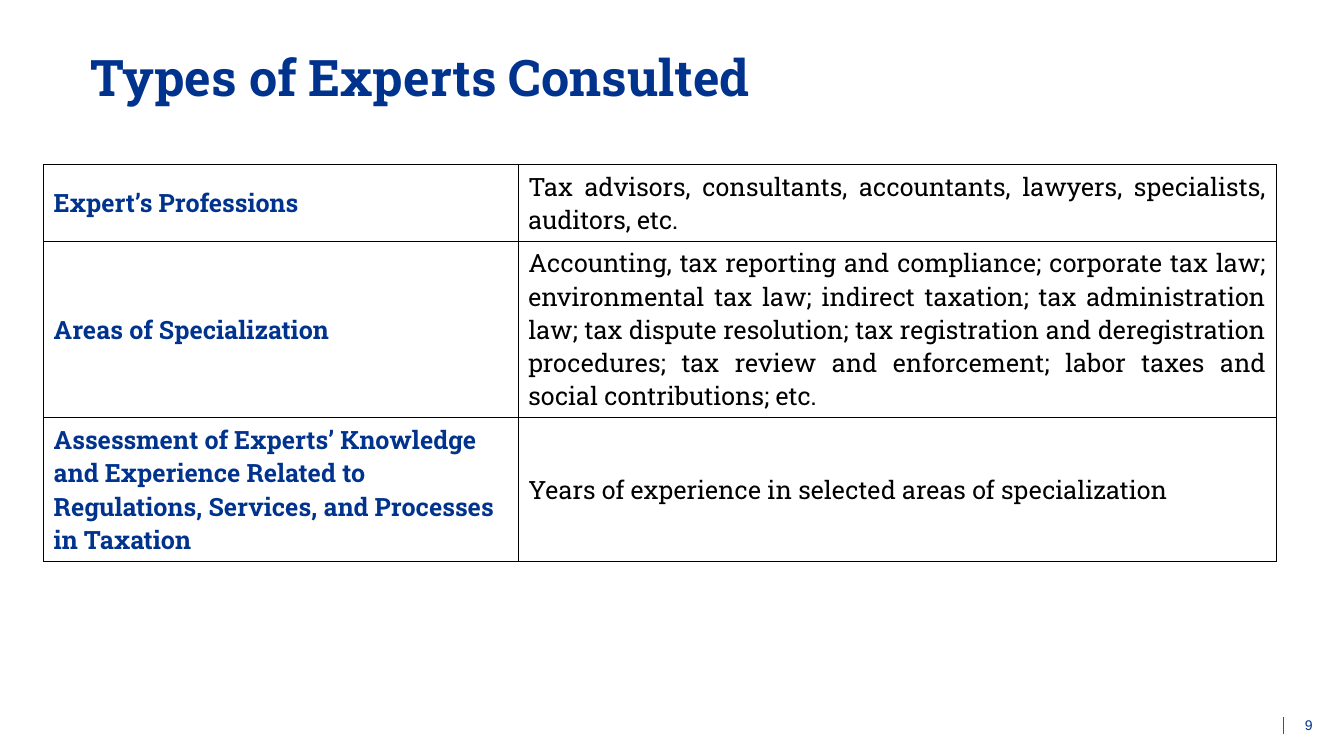
from dataclasses import dataclass

from lxml import etree
from pptx import Presentation
from pptx.dml.color import RGBColor
from pptx.enum.shapes import MSO_CONNECTOR
from pptx.enum.text import MSO_ANCHOR, PP_ALIGN
from pptx.oxml.ns import qn
from pptx.util import Cm, Pt

STRAIGHT = MSO_CONNECTOR.STRAIGHT
MIDDLE, BOTTOM = MSO_ANCHOR.MIDDLE, MSO_ANCHOR.BOTTOM
LEFT, RIGHT, JUSTIFY = PP_ALIGN.LEFT, PP_ALIGN.RIGHT, PP_ALIGN.JUSTIFY


@dataclass(frozen=True)
class Theme:
    navy: str = "00338D"
    blue: str = "1E49E2"
    black: str = "000000"
    heading_font: str = "Roboto Slab"
    number_font: str = "Arial"
    title_size: int = 36
    table_size: int = 18
    number_size: int = 10
    border_width: int = 1
    divider_width: float = 0.5


theme = Theme()


def write(frame, text, font, size, color, bold=False, align=LEFT):
    """Put one styled run in the frame's first paragraph and return the paragraph."""
    frame.word_wrap = True
    para = frame.paragraphs[0]
    para.alignment = align
    span = para.add_run()
    span.text = text
    span.font.name = font
    span.font.size = Pt(size)
    span.font.bold = bold
    span.font.color.rgb = RGBColor.from_string(color)
    return para


def add_borders(cell):
    properties = cell._tc.get_or_add_tcPr()
    for position, side in enumerate(("a:lnL", "a:lnR", "a:lnT", "a:lnB")):
        line = etree.Element(qn(side), w=str(Pt(theme.border_width)))
        fill = etree.SubElement(line, qn("a:solidFill"))
        etree.SubElement(fill, qn("a:srgbClr"), val=theme.black)
        properties.insert(position, line)


deck = Presentation()
deck.slide_width, deck.slide_height = Cm(33.87), Cm(19.05)
page = deck.slides.add_slide(deck.slide_layouts[6])

# Title
title = page.shapes.add_textbox(Cm(2.03), Cm(1.37), Cm(28.32), Cm(1.47)).text_frame
title.vertical_anchor = MIDDLE
title_para = write(title, "Types of Experts Consulted", theme.heading_font,
                   theme.title_size, theme.navy, bold=True)
title_para.line_spacing = 0.7

# Table of experts: label, its alignment, description, row height in cm
expert_rows = [
    ("Expert’s Professions", JUSTIFY,
     "Tax advisors, consultants, accountants, lawyers, specialists, auditors, etc.", 1.93),
    ("Areas of Specialization", JUSTIFY,
     "Accounting, tax reporting and compliance; corporate tax law; environmental tax law; "
     "indirect taxation; tax administration law; tax dispute resolution; tax registration and "
     "deregistration procedures; tax review and enforcement; labor taxes and social "
     "contributions; etc.", 4.45),
    ("Assessment of Experts’ Knowledge and Experience Related to Regulations, Services, "
     "and Processes in Taxation", LEFT,
     "Years of experience in selected areas of specialization", 3.62),
]
column_widths = (11.96, 19.1)
table = page.shapes.add_table(len(expert_rows), len(column_widths), Cm(1.1), Cm(4.15),
                              Cm(sum(column_widths)), Cm(10)).table
table.first_row = False
table.horz_banding = False
for column, width in zip(table.columns, column_widths):
    column.width = Cm(width)
for row, (label, label_align, description, height) in zip(table.rows, expert_rows):
    row.height = Cm(height)
    label_cell, description_cell = row.cells
    for cell in (label_cell, description_cell):
        cell.vertical_anchor = MIDDLE
        cell.fill.background()
        add_borders(cell)
    write(label_cell.text_frame, label, theme.heading_font, theme.table_size,
          theme.navy, bold=True, align=label_align)
    write(description_cell.text_frame, description, theme.heading_font, theme.table_size,
          theme.black, align=JUSTIFY)

# Page number and its divider
divider = page.shapes.add_connector(STRAIGHT, Cm(32.33), Cm(18.06), Cm(32.33), Cm(18.49))
divider.line.color.rgb = RGBColor.from_string(theme.blue)
divider.line.width = Pt(theme.divider_width)
etree.SubElement(divider._element.spPr, qn("a:effectLst"))

number = page.shapes.add_textbox(Cm(32.39), Cm(18.06), Cm(0.69), Cm(0.41)).text_frame
number.margin_left = number.margin_right = number.margin_top = number.margin_bottom = 0
number.vertical_anchor = BOTTOM
write(number, "9", theme.number_font, theme.number_size, theme.navy, align=RIGHT)

deck.save("out.pptx")
